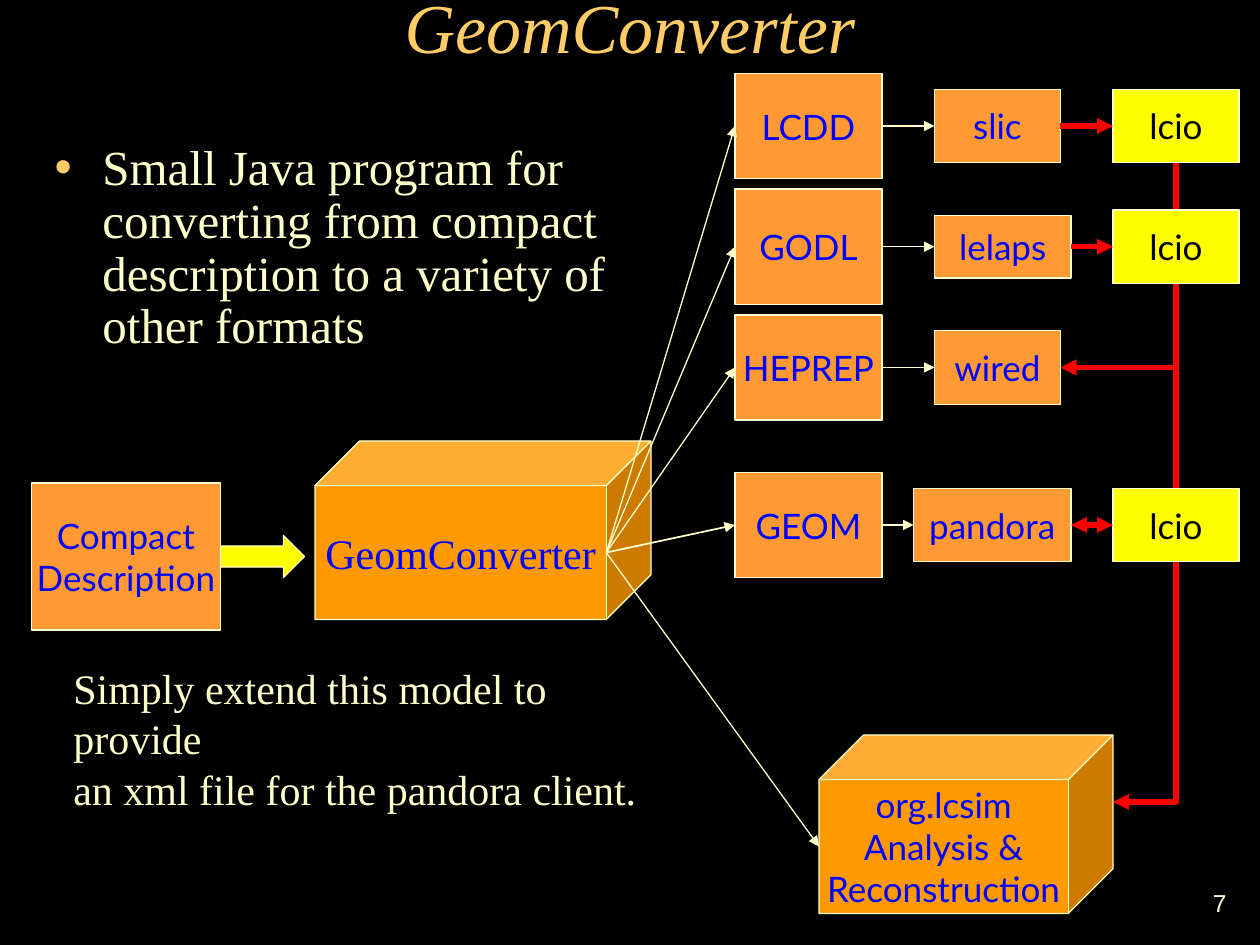
from lxml.etree import SubElement
from pptx import Presentation
from pptx.dml.color import RGBColor
from pptx.enum.shapes import MSO_CONNECTOR as Connector, MSO_SHAPE as Preset
from pptx.enum.text import MSO_ANCHOR as Anchor, MSO_AUTO_SIZE as AutoSize, PP_ALIGN as Align
from pptx.oxml.ns import qn
from pptx.util import Inches, Pt

COLORS = {"black": "000000", "cream": "FFFFCC", "gold": "FFCC66", "box": "FF9933",
          "cube": "FF9900", "yellow": "FFFF00", "blue": "0000FF", "red": "FF0000"}
SERIF, SANS = "Times New Roman", "Lato"
LEFT, RIGHT = 1, 3
FORMAT_LEFT, FORMAT_WIDTH = 70, 14
OUTPUT_LEFT, OUTPUT_WIDTH, OUTPUT_HEIGHT = 106, 12, 7
CHAINS = [
    ("LCDD", 12, 10, "slic", 89, 12, 7, True),
    ("GODL", 23.5, 11, "lelaps", 89, 13, 6, True),
    ("HEPREP", 35, 10, "wired", 89, 12, 7, False),
    ("GEOM", 50, 10, "pandora", 87, 15, 7, True),
]


def units(value):
    return Inches(value / 12)


def color(name):
    return RGBColor.from_string(COLORS[name])


class Diagram:
    """Draws styled elements on a slide over a grid of 120 columns and 90 rows."""

    def __init__(self, slide):
        self.slide = slide
        slide.background.fill.solid()
        slide.background.fill.fore_color.rgb = color("black")

    def set_text(self, shape, text, font, size, ink, align, anchor, wrap=True, italic=False):
        frame = shape.text_frame
        frame.text = text
        frame.word_wrap = wrap
        frame.auto_size = AutoSize.NONE
        frame.vertical_anchor = anchor
        for paragraph in frame.paragraphs:
            paragraph.alignment = align
            for run in paragraph.runs:
                run.font.name, run.font.size, run.font.italic = font, Pt(size), italic
                run.font.color.rgb = color(ink)

    def place(self, shape, left, top, width, height):
        shape.left, shape.top = units(left), units(top)
        shape.width, shape.height = units(width), units(height)

    def title(self, text, *box):
        shape = self.slide.shapes.title
        self.place(shape, *box)
        self.set_text(shape, text, SERIF, 40, "gold", Align.CENTER, Anchor.BOTTOM, italic=True)

    def bullet(self, text, *box):
        shape = self.slide.placeholders[1]
        self.place(shape, *box)
        self.set_text(shape, text, SERIF, 28, "cream", Align.LEFT, Anchor.TOP)
        paragraph = shape.text_frame.paragraphs[0]
        paragraph.line_spacing, paragraph.space_before = 0.9, Pt(0)
        properties = paragraph._p.get_or_add_pPr()
        properties.set("marL", str(Inches(0.38)))
        properties.set("indent", str(-Inches(0.38)))
        bullet_color = SubElement(properties, qn("a:buClr"))
        SubElement(bullet_color, qn("a:srgbClr"), val=COLORS["gold"])
        SubElement(properties, qn("a:buChar"), char="•")

    def note(self, text, left, top, width, height, font=SERIF, size=24,
             align=Align.LEFT, anchor=Anchor.TOP):
        shape = self.slide.shapes.add_textbox(*map(units, (left, top, width, height)))
        self.set_text(shape, text, font, size, "cream", align, anchor)

    def block(self, text, left, top, width, height, preset=Preset.RECTANGLE,
              fill="box", ink="blue", font=SANS, size=20):
        shape = self.slide.shapes.add_shape(preset, *map(units, (left, top, width, height)))
        shape.shadow.inherit = False
        shape.fill.solid()
        shape.fill.fore_color.rgb = color(fill)
        shape.line.color.rgb, shape.line.width = color("cream"), Pt(0.75)
        if text:
            self.set_text(shape, text, font, size, ink, Align.CENTER, Anchor.MIDDLE, wrap=False)
        return shape

    def connector(self, kind, start, end, ink, width, both=False):
        line = self.slide.shapes.add_connector(kind, *map(units, start + end))
        line.line.color.rgb, line.line.width = color(ink), Pt(width)
        properties = line._element.spPr
        outline = properties.find(qn("a:ln"))
        for tag in ("a:headEnd", "a:tailEnd") if both else ("a:tailEnd",):
            SubElement(outline, qn(tag), type="triangle")
        SubElement(properties, qn("a:effectLst"))
        return line

    def fan(self, start, target, width=0.75):
        line = self.connector(Connector.STRAIGHT, start, start, "cream", width)
        line.end_connect(target, LEFT)

    def link(self, source, target, ink="cream", width=0.75, both=False):
        line = self.connector(Connector.STRAIGHT, (0, 0), (1, 1), ink, width, both)
        line.begin_connect(source, RIGHT)
        line.end_connect(target, LEFT)

    def down_then_left(self, start, end):
        middle_x, middle_y = (start[0] + end[0]) / 2, (start[1] + end[1]) / 2
        half_run, half_drop = (start[0] - end[0]) / 2, (end[1] - start[1]) / 2
        line = self.connector(Connector.ELBOW, (middle_x - half_drop, middle_y - half_run),
                              (middle_x + half_drop, middle_y + half_run), "red", 3)
        properties = line._element.spPr
        properties.find(qn("a:xfrm")).set("rot", "5400000")
        properties.find(qn("a:prstGeom")).set("prst", "bentConnector2")


def main():
    presentation = Presentation()
    presentation.slide_width, presentation.slide_height = Inches(10), Inches(7.5)
    diagram = Diagram(presentation.slides.add_slide(presentation.slide_layouts[1]))

    diagram.title("GeomConverter", 9, 2, 102, 5)
    diagram.bullet("Small Java program for converting from compact description "
                   "to a variety of other formats", 4, 13, 56, 25)
    diagram.note("Simply extend this model to provide\nan xml file for the pandora client.",
                 5.8, 62.5, 59.5, 11)
    diagram.note("7", 93, 83, 25, 6, "Arial", 14, Align.RIGHT, Anchor.MIDDLE)

    diagram.block("Compact\nDescription", 3, 46, 18, 14)
    diagram.block("", 21, 51, 8, 4, Preset.RIGHT_ARROW, "yellow")
    diagram.block("GeomConverter", 30, 42, 32, 17, Preset.CUBE, "cube", font=SERIF, size=24)
    diagram.block("org.lcsim\nAnalysis &\nReconstruction", 78, 70, 28, 17, Preset.CUBE, "cube")

    depth = 17 / 4
    front_middle = depth + (17 - depth) / 2
    hub = (62 - depth, 42 + front_middle)
    diagram.connector(Connector.STRAIGHT, hub, (78, 70 + front_middle), "cream", 0.75)

    trunk = OUTPUT_LEFT + OUTPUT_WIDTH / 2
    wired, analysis = (101, 35), (106, 70 + (17 - depth) / 2)
    for start_row, end in ((15.5, wired), (27, wired), (27, analysis)):
        diagram.down_then_left((trunk, start_row), end)

    for name, middle, height, tool, left, width, tool_height, has_output in CHAINS:
        format_box = diagram.block(name, FORMAT_LEFT, middle - height / 2, FORMAT_WIDTH, height)
        tool_box = diagram.block(tool, left, middle - tool_height / 2, width, tool_height)
        diagram.fan(hub, format_box, 1 if name == "GEOM" else 0.75)
        diagram.link(format_box, tool_box)
        if has_output:
            output = diagram.block("lcio", OUTPUT_LEFT, middle - OUTPUT_HEIGHT / 2, OUTPUT_WIDTH,
                                   OUTPUT_HEIGHT, fill="yellow", ink="black")
            diagram.link(tool_box, output, "red", 3, both=tool == "pandora")

    presentation.save("out.pptx")


if __name__ == "__main__":
    main()
